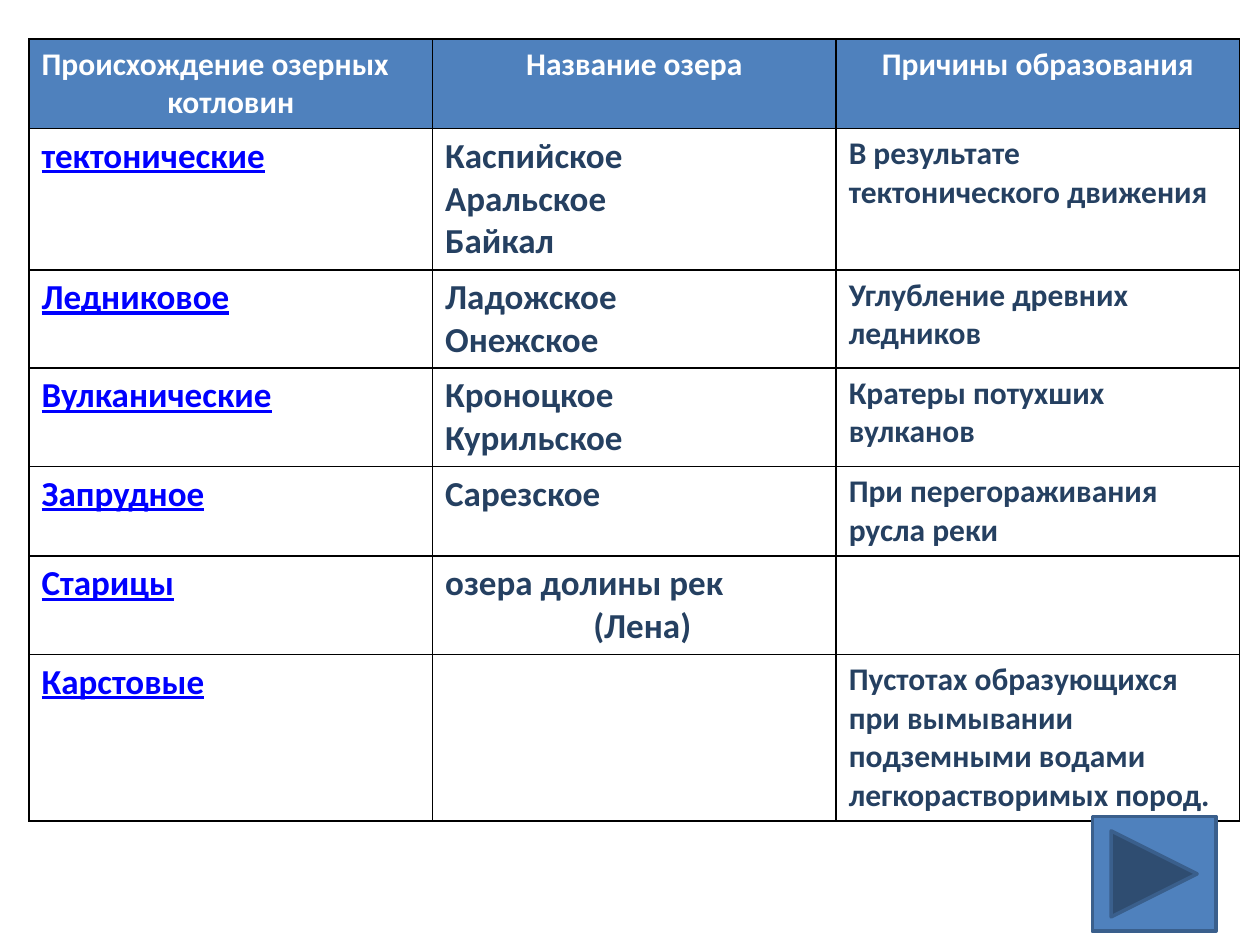
from pptx import Presentation
from pptx import util as u
from pptx.dml.color import RGBColor
from pptx.enum import shapes, text
from pptx.oxml import parse_xml
from pptx.oxml.ns import nsdecls

WHITE = RGBColor(0xFF, 0xFF, 0xFF)
BLUE = RGBColor(0x4F, 0x81, 0xBD)
EDGE = RGBColor(0x3A, 0x5F, 0x8C)
LINK = RGBColor(0x00, 0x00, 0xFF)
NAVY = RGBColor(0x25, 0x40, 0x61)

LEFT, CENTER = text.PP_ALIGN.LEFT, text.PP_ALIGN.CENTER
BASE = {"name": "Calibri", "bold": True}
HEADER = {**BASE, "size": u.Pt(18)}
ORIGIN = {**BASE, "size": u.Pt(20), "underline": True}
LAKE = {**BASE, "size": u.Pt(20)}
CAUSE = {**BASE, "size": u.Pt(18)}
BODY_STYLES = [(ORIGIN, LINK), (LAKE, NAVY), (CAUSE, NAVY)]

HEADINGS = [
    [("Происхождение озерных", LEFT), ("котловин", CENTER)],
    [("Название озера", CENTER)],
    [("Причины образования", CENTER)],
]
LAKES = [
    ("тектонические", ["Каспийское", "Аральское", "Байкал"],
     "В результате тектонического движения"),
    ("Ледниковое", ["Ладожское", "Онежское"], "Углубление древних ледников"),
    ("Вулканические", ["Кроноцкое", "Курильское"], "Кратеры потухших вулканов"),
    ("Запрудное", ["Сарезское"], "При перегораживания русла реки"),
    ("Старицы", ["озера долины рек", "(Лена)"], ""),
    ("Карстовые", [],
     "Пустотах образующихся при вымывании подземными водами "
     "легкорастворимых пород."),
]
ROW_HEIGHTS = [51, 80.5, 56, 56, 51, 56, 95]
COLUMN_WIDTH = 230.6


def set_borders(cell):
    """Draw a thin black line on every side of a cell."""
    properties = cell._tc.get_or_add_tcPr()
    for position, side in enumerate(("lnL", "lnR", "lnT", "lnB")):
        properties.insert(position, parse_xml(
            f'<a:{side} {nsdecls("a")} w="{u.Pt(1)}"><a:solidFill>'
            f'<a:srgbClr val="000000"/></a:solidFill></a:{side}>'))


def fill_cell(cell, lines, style, color, background):
    """Write aligned lines into a cell and dress it."""
    cell.fill.solid()
    cell.fill.fore_color.rgb = background
    set_borders(cell)
    frame = cell.text_frame
    for index, (wording, alignment) in enumerate(lines):
        paragraph = frame.add_paragraph() if index else frame.paragraphs[0]
        paragraph.alignment = alignment
        run = paragraph.add_run()
        run.text = wording
        for attribute, value in style.items():
            setattr(run.font, attribute, value)
        run.font.color.rgb = color


def add_lake_table(slide):
    """Add the table of lake origins, names and causes."""
    lakes = slide.shapes.add_table(
        len(ROW_HEIGHTS), len(HEADINGS), u.Pt(16.6), u.Pt(22.3),
        u.Pt(COLUMN_WIDTH * len(HEADINGS)), u.Pt(sum(ROW_HEIGHTS))).table
    for column in lakes.columns:
        column.width = u.Pt(COLUMN_WIDTH)
    for row, height in zip(lakes.rows, ROW_HEIGHTS):
        row.height = u.Pt(height)
    for column, heading in enumerate(HEADINGS):
        fill_cell(lakes.cell(0, column), heading, HEADER, WHITE, BLUE)
    for row, (origin, names, cause) in enumerate(LAKES, start=1):
        entries = [[origin], names, [cause] if cause else []]
        for column, (entry, (style, color)) in enumerate(zip(entries, BODY_STYLES)):
            lines = [(line, CENTER if line.startswith("(") else LEFT)
                     for line in entry]
            fill_cell(lakes.cell(row, column), lines, style, color, WHITE)
    river = lakes.cell(5, 1).text_frame.paragraphs[1]
    river._p.get_or_add_pPr().set("marL", str(u.Pt(9)))


def add_next_button(slide):
    """Add the forward button in the lower right corner."""
    forward = slide.shapes.add_shape(
        shapes.MSO_SHAPE.ACTION_BUTTON_FORWARD_OR_NEXT,
        u.Pt(624.2), u.Pt(466.6), u.Pt(70.6), u.Pt(65.5))
    forward.shadow.inherit = False
    forward.fill.solid()
    forward.fill.fore_color.rgb = BLUE
    forward.line.color.rgb = EDGE
    forward.line.width = u.Pt(2)


def main():
    """Build and save the slide."""
    deck = Presentation()
    deck.slide_width, deck.slide_height = u.Pt(720), u.Pt(540)
    slide = deck.slides.add_slide(deck.slide_layouts[6])
    add_lake_table(slide)
    add_next_button(slide)
    deck.save("out.pptx")


if __name__ == "__main__":
    main()
